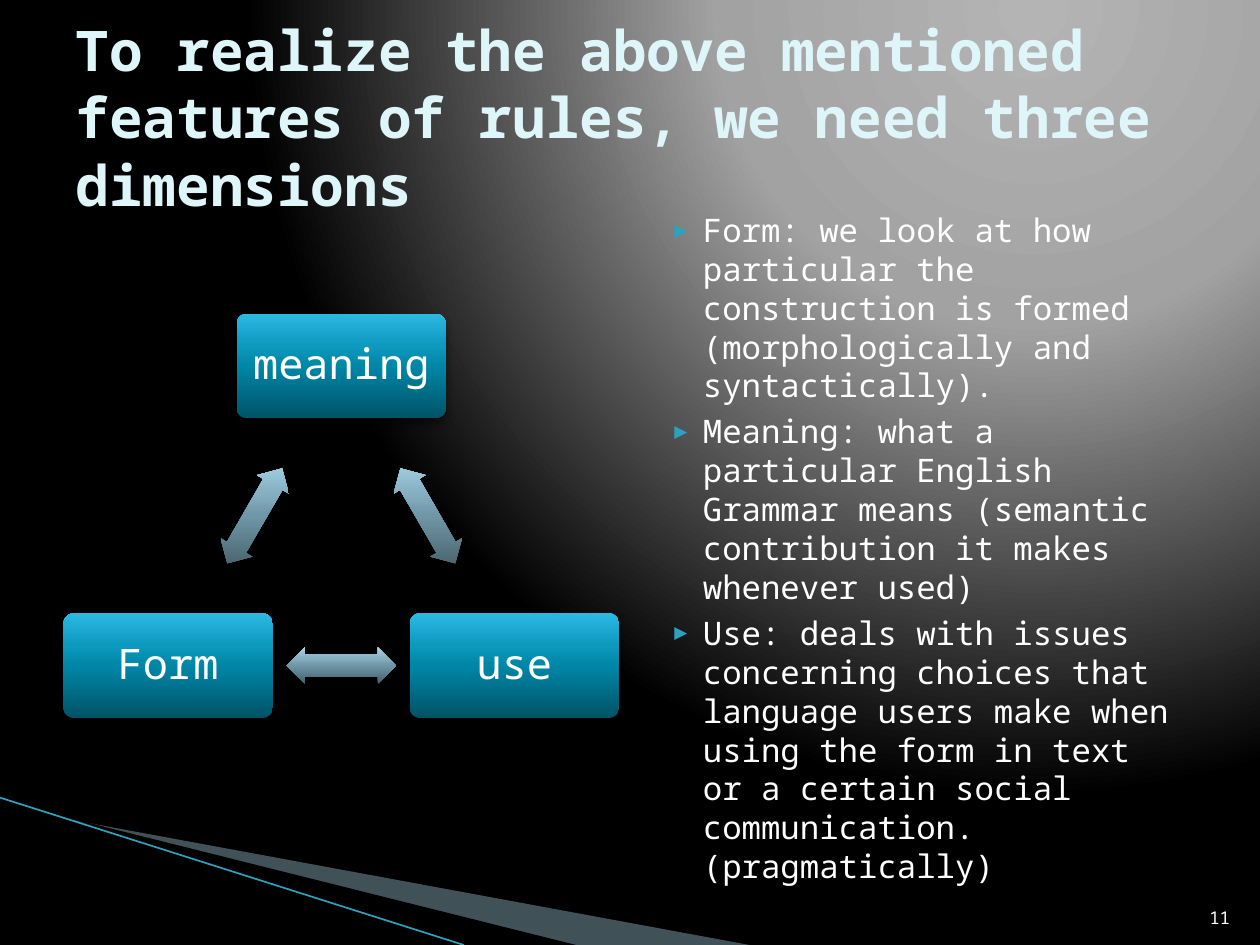
from lxml import etree
from pptx import Presentation
from pptx import util as u
from pptx.dml.color import RGBColor
from pptx.enum import shapes, text
from pptx.oxml import parse_xml
from pptx.oxml.ns import nsdecls, qn

Cm, Pt = u.Cm, u.Pt
FONT = "Noto Sans Mono"
WHITE = RGBColor(0xFF, 0xFF, 0xFF)
BLACK = RGBColor(0, 0, 0)
TITLE = RGBColor(0xDE, 0xF5, 0xFA)
BULLET = RGBColor(0x2D, 0xA2, 0xBF)
PALE = RGBColor(0xA0, 0xCB, 0xDC)
LINE = RGBColor(0x97, 0xC5, 0xD8)
BOX_STOPS = [(0, RGBColor(0x00, 0x53, 0x67)), (50, RGBColor(0x00, 0x86, 0xA7)),
             (70, RGBColor(0x0E, 0x9A, 0xBE)), (100, RGBColor(0x2C, 0xB9, 0xE3))]
ARROW_STOPS = [(0, RGBColor(0x44, 0x5E, 0x68)), (50, RGBColor(0x6F, 0x96, 0xA7)),
               (70, RGBColor(0x86, 0xAF, 0xC1)), (100, RGBColor(0xA6, 0xD5, 0xE9))]
BACK_STOPS = [(0, RGBColor(0xB4, 0xB4, 0xB4)), (40, RGBColor(0xA2, 0xA2, 0xA2)), (100, BLACK)]
UPWARD = '<a:lin ang="16200000" scaled="0"/>'
GLOW = '<a:path path="circle"><a:fillToRect l="65000" t="0" r="0" b="98000"/></a:path>'


def set_gradient(fill, parent, stops, direction):
    """Replace the fill inside parent with a gradient that stays upright on rotation."""
    fill.gradient()
    stop_xml = "".join(f'<a:gs pos="{pos * 1000}"><a:srgbClr val="{color}"/></a:gs>'
                       for pos, color in stops)
    old = parent.find(".//" + qn("a:gradFill"))
    old.getparent().replace(old, parse_xml(
        f'<a:gradFill {nsdecls("a")} rotWithShape="0"><a:gsLst>{stop_xml}</a:gsLst>'
        f'{direction}</a:gradFill>'))


def add_glossy_shape(kind, center, size, adjustments, stops):
    """Add a gradient shape with a soft shadow, placed by its center."""
    width, height = size
    shape = slide.shapes.add_shape(kind, Cm(center[0] - width / 2), Cm(center[1] - height / 2),
                                   Cm(width), Cm(height))
    for index, value in enumerate(adjustments):
        shape.adjustments[index] = value
    shape.line.fill.background()
    set_gradient(shape.fill, shape.element.spPr, stops, UPWARD)
    shape.shadow.inherit = False
    shape.element.spPr.find(qn("a:effectLst")).append(parse_xml(
        f'<a:outerShdw {nsdecls("a")} blurRad="{Pt(5)}" dist="{Pt(3)}" dir="5400000" '
        'rotWithShape="0"><a:srgbClr val="000000"><a:alpha val="45000"/></a:srgbClr>'
        '</a:outerShdw>'))
    return shape


presentation = Presentation()
presentation.slide_width, presentation.slide_height = Cm(25.4), Cm(19.05)
slide = presentation.slides.add_slide(presentation.slide_layouts[5])
set_gradient(slide.background.fill, slide.element, BACK_STOPS, GLOW)

# Corner decoration
wedges = [
    (PALE, 40, [(1.4, 16.52), (15.11, 19.05), (11.58, 19.05)]),
    (BLACK, 100, [(1.35, 16.48), (11.61, 19.05), (9.45, 19.05)]),
]
for color, opacity, points in wedges:
    corners = [(Cm(x), Cm(y)) for x, y in points]
    builder = slide.shapes.build_freeform(*corners[0], scale=1.0)
    builder.add_line_segments(corners[1:], close=True)
    wedge = builder.convert_to_shape()
    wedge.shadow.inherit = False
    wedge.line.fill.background()
    wedge.fill.solid()
    wedge.fill.fore_color.rgb = color
    color_element = wedge.element.spPr.find(".//" + qn("a:srgbClr"))
    etree.SubElement(color_element, qn("a:alpha"), val=str(opacity * 1000))

corner_line = slide.shapes.add_connector(shapes.MSO_CONNECTOR.STRAIGHT,
                                         Cm(0), Cm(16.08), Cm(9.35), Cm(19.05))
corner_line.line.color.rgb = BULLET
corner_line.line.width = Pt(0.95)
etree.SubElement(corner_line.element.spPr, qn("a:effectLst"))

# Triangle of dimensions, with an arrow halfway along each side
corners = [("meaning", (6.88, 7.38)), ("use", (10.37, 13.42)), ("Form", (3.39, 13.42))]
for index, (label, center) in enumerate(corners):
    box = add_glossy_shape(shapes.MSO_SHAPE.ROUNDED_RECTANGLE, center, (4.22, 2.11),
                           [0.1], BOX_STOPS)
    frame = box.text_frame
    frame.margin_left = frame.margin_right = Cm(0.1)
    frame.vertical_anchor = text.MSO_ANCHOR.MIDDLE
    paragraph = frame.paragraphs[0]
    paragraph.text = label
    paragraph.alignment = text.PP_ALIGN.CENTER
    paragraph.line_spacing = 0.9
    for name, value in {"name": FONT, "size": Pt(24)}.items():
        setattr(paragraph.font, name, value)
    paragraph.font.color.rgb = WHITE

    following = corners[(index + 1) % 3][1]
    middle = [(a + b) / 2 for a, b in zip(center, following)]
    arrow = add_glossy_shape(shapes.MSO_SHAPE.LEFT_RIGHT_ARROW, middle, (2.21, 0.74),
                             [0.6, 0.5], ARROW_STOPS)
    arrow.rotation = 60 + 120 * index

# Title, explanations and slide number
explanations = [
    "Form: we look at how particular the construction is formed (morphologically and syntactically).",
    "Meaning: what a particular English Grammar means (semantic contribution it makes whenever used)",
    "Use: deals with issues concerning choices that language users make when using the form in "
    "text or a certain social communication. (pragmatically)",
]
title = slide.shapes.title
title.left, title.top, title.width, title.height = Cm(1.27), Cm(0.76), Cm(22.86), Cm(3.18)
body = slide.shapes.add_textbox(Cm(12.9), Cm(4.11), Cm(11.23), Cm(12.57))
number = slide.shapes.add_textbox(Cm(24.03), Cm(17.81), Cm(1.02), Cm(1.02))

LEFT, RIGHT = text.PP_ALIGN.LEFT, text.PP_ALIGN.RIGHT
TOP, MIDDLE, BOTTOM = text.MSO_ANCHOR.TOP, text.MSO_ANCHOR.MIDDLE, text.MSO_ANCHOR.BOTTOM
blocks = [
    (title, ["To realize the above mentioned features of rules, we need three dimensions"],
     MIDDLE, LEFT, TITLE, {"size": Pt(32), "bold": True}),
    (body, explanations, TOP, LEFT, WHITE, {"size": Pt(18.5)}),
    (number, ["11"], BOTTOM, RIGHT, WHITE, {"size": Pt(10)}),
]
for shape, lines, anchor, alignment, color, font_format in blocks:
    frame = shape.text_frame
    frame.word_wrap = True
    frame.auto_size = text.MSO_AUTO_SIZE.NONE
    frame.vertical_anchor = anchor
    for index, line in enumerate(lines):
        paragraph = frame.paragraphs[0] if index == 0 else frame.add_paragraph()
        paragraph.text = line
        paragraph.alignment = alignment
        if index:
            paragraph.space_before = Pt(4)
        if shape is body:
            properties = paragraph._p.get_or_add_pPr()
            properties.set("marL", str(Cm(1.02)))
            properties.set("indent", str(Cm(-0.71)))
            bullet_color = etree.SubElement(properties, qn("a:buClr"))
            etree.SubElement(bullet_color, qn("a:srgbClr"), val=str(BULLET))
            etree.SubElement(properties, qn("a:buSzPct"), val="68000")
            etree.SubElement(properties, qn("a:buFont"), typeface=FONT)
            etree.SubElement(properties, qn("a:buChar"), char="▶")
        for name, value in {"name": FONT, **font_format}.items():
            setattr(paragraph.font, name, value)
        paragraph.font.color.rgb = color

presentation.save("out.pptx")
